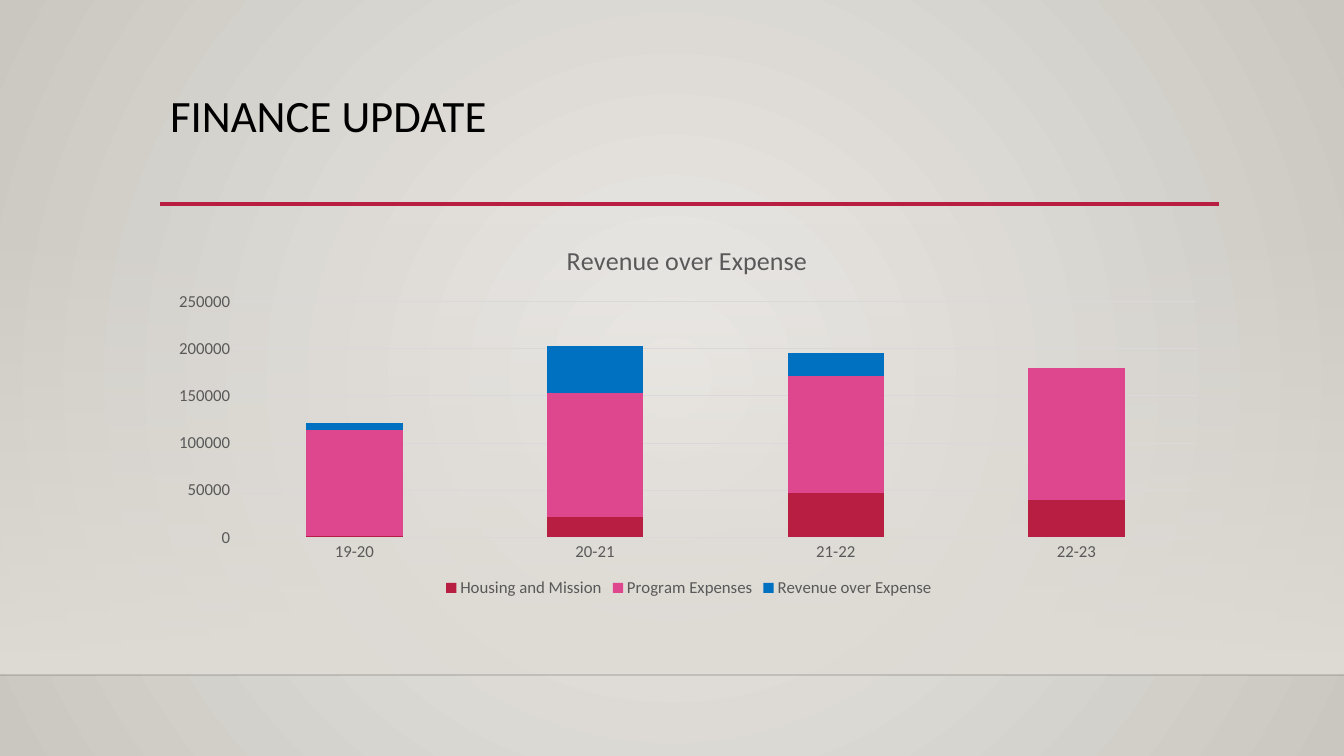
from dataclasses import dataclass

from lxml.etree import SubElement
from pptx import Presentation
from pptx.chart.data import CategoryChartData
from pptx.dml.color import RGBColor
from pptx.enum.chart import XL_CHART_TYPE, XL_LEGEND_POSITION, XL_TICK_MARK
from pptx.enum.shapes import MSO_CONNECTOR, MSO_SHAPE
from pptx.enum.text import MSO_ANCHOR, MSO_AUTO_SIZE, PP_ALIGN
from pptx.oxml import parse_xml
from pptx.oxml.ns import nsdecls, qn
from pptx.util import Pt

SCALE = 914400 / 100.8


@dataclass(frozen=True)
class Theme:
    face: str = "Calibri"
    head: float = 32
    name: float = 18.6
    label: float = 12
    black: str = "000000"
    gray: str = "595959"
    grid: str = "D9D9D9"
    red: str = "B71E42"
    pink: str = "DE478E"
    blue: str = "0070C0"
    plum: str = "795FAF"
    light: str = "ECEAE7"
    dark: str = "CAC7C1"
    floor: str = "DFDBD5"


def px(*nums):
    return [round(num * SCALE) for num in nums]


def apply(item, values):
    for key, value in values.items():
        setattr(item, key, value)


def blend(fill, *tones):
    fill.gradient()
    for stop, tone in zip(fill.gradient_stops, tones):
        stop.color.rgb = RGBColor.from_string(tone)


def fade(tone, share):
    SubElement(tone, qn("a:alpha")).set("val", str(share * 1000))


def pen(line, tone, width):
    line.color.rgb = RGBColor.from_string(tone)
    line.width = Pt(width)


def place(node, index, **spots):
    for old in node.findall(qn("c:layout")):
        node.remove(old)
    layout = parse_xml(f"<c:layout {nsdecls('c')}><c:manualLayout/></c:layout>")
    for key, value in spots.items():
        SubElement(layout[0], qn(f"c:{key}")).set("val", str(value))
    node.insert(index, layout)


def omit(legend, index):
    entry = parse_xml(
        f'<c:legendEntry {nsdecls("c")}><c:idx val="{index}"/>'
        '<c:delete val="1"/></c:legendEntry>'
    )
    legend.find(qn("c:legendPos")).addnext(entry)


class Page:
    def __init__(self, slide, theme):
        self.slide = slide
        self.theme = theme

    def style(self, font, size, tone):
        apply(font, {"name": self.theme.face, "size": Pt(size), "bold": False})
        font.color.rgb = RGBColor.from_string(tone)

    def back(self):
        blend(self.slide.background.fill, self.theme.light, self.theme.dark)
        slope = self.slide.element.xpath("./p:cSld/p:bg//a:lin")[0]
        ring = parse_xml(
            f'<a:path {nsdecls("a")} path="circle">'
            '<a:fillToRect l="50000" t="50000" r="50000" b="50000"/></a:path>'
        )
        slope.getparent().replace(slope, ring)

    def wall(self, *box):
        shape = self.slide.shapes.add_shape(MSO_SHAPE.RECTANGLE, *px(*box))
        shape.shadow.inherit = False
        shape.line.fill.background()
        blend(shape.fill, self.theme.floor, self.theme.floor)
        shape.fill.gradient_angle = 270
        fade(shape.element.xpath(".//a:gs/a:srgbClr")[0], 0)

    def rule(self, ends, tone, width, share=100):
        line = self.slide.shapes.add_connector(MSO_CONNECTOR.STRAIGHT, *px(*ends))
        pen(line.line, tone, width)
        SubElement(line.element.spPr, qn("a:effectLst"))
        if share < 100:
            fade(line.element.xpath(".//a:ln//a:srgbClr")[0], share)

    def title(self, text, *box):
        title = self.slide.shapes.title
        apply(title, dict(zip(("left", "top", "width", "height"), px(*box))))
        frame = title.text_frame
        frame.text = text
        apply(frame, {"word_wrap": True, "auto_size": MSO_AUTO_SIZE.NONE,
                      "vertical_anchor": MSO_ANCHOR.TOP})
        line = frame.paragraphs[0]
        apply(line, {"alignment": PP_ALIGN.LEFT, "line_spacing": 0.9})
        self.style(line.font, self.theme.head, self.theme.black)

    def chart(self, text, years, sets, *box):
        theme = self.theme
        data = CategoryChartData()
        data.categories = years
        for name, tone, values in sets:
            data.add_series(name, values)
        chart = self.slide.shapes.add_chart(
            XL_CHART_TYPE.COLUMN_STACKED, *px(*box), data).chart
        self.style(chart.font, theme.label, theme.gray)
        apply(chart, {"has_title": True, "has_legend": True})
        frame = chart.chart_title.text_frame
        frame.text = text
        self.style(frame.paragraphs[0].runs[0].font, theme.name, theme.gray)
        root = chart.element.find(qn("c:chart"))
        place(root.find(qn("c:title")), 1,
              xMode="edge", yMode="edge", x=0.38, y=0.04)
        place(root.find(qn("c:plotArea")), 0,
              layoutTarget="inner", xMode="edge", yMode="edge",
              x=0.07, y=0.21, w=0.91, h=0.62)
        apply(chart.legend, {"position": XL_LEGEND_POSITION.BOTTOM,
                             "include_in_layout": False})
        self.style(chart.legend.font, theme.label, theme.gray)
        plot = chart.plots[0]
        apply(plot, {"gap_width": 150, "overlap": 100, "vary_by_categories": False})
        for part, (name, tone, values) in zip(plot.series, sets):
            part.format.fill.solid()
            part.format.fill.fore_color.rgb = RGBColor.from_string(tone)
        omit(root.find(qn("c:legend")), len(sets) - 1)
        base, side = chart.category_axis, chart.value_axis
        for axis in (base, side):
            apply(axis, {"major_tick_mark": XL_TICK_MARK.NONE,
                         "minor_tick_mark": XL_TICK_MARK.NONE})
            self.style(axis.tick_labels.font, theme.label, theme.gray)
        apply(side, {"minimum_scale": 0, "maximum_scale": 250000,
                     "major_unit": 50000, "has_major_gridlines": True})
        pen(base.format.line, theme.grid, 0.75)
        pen(side.major_gridlines.format.line, theme.grid, 0.75)
        side.format.line.fill.background()


def main():
    deck = Presentation()
    apply(deck, dict(zip(("slide_width", "slide_height"), px(1344, 756))))
    theme = Theme()
    page = Page(deck.slides.add_slide(deck.slide_layouts[5]), theme)
    page.back()
    page.wall(0, 223, 1344, 452)
    page.rule((0, 675, 1344, 675), theme.black, 1, 20)
    page.rule((160, 204, 1219, 204), theme.red, 2.5)
    page.title("FINANCE UPDATE", 160, 89, 1058, 116)
    page.chart(
        "Revenue over Expense",
        ("19-20", "20-21", "21-22", "22-23"),
        (
            ("Housing and Mission", theme.red, (1000, 21000, 47000, 40000)),
            ("Program Expenses", theme.pink, (113000, 132000, 124000, 140000)),
            ("Revenue over Expense", theme.blue, (7000, 50000, 25000, 0)),
            ("Series 4", theme.plum, (None,) * 4),
        ),
        160, 222, 1058, 380,
    )
    deck.save("out.pptx")


if __name__ == "__main__":
    main()
